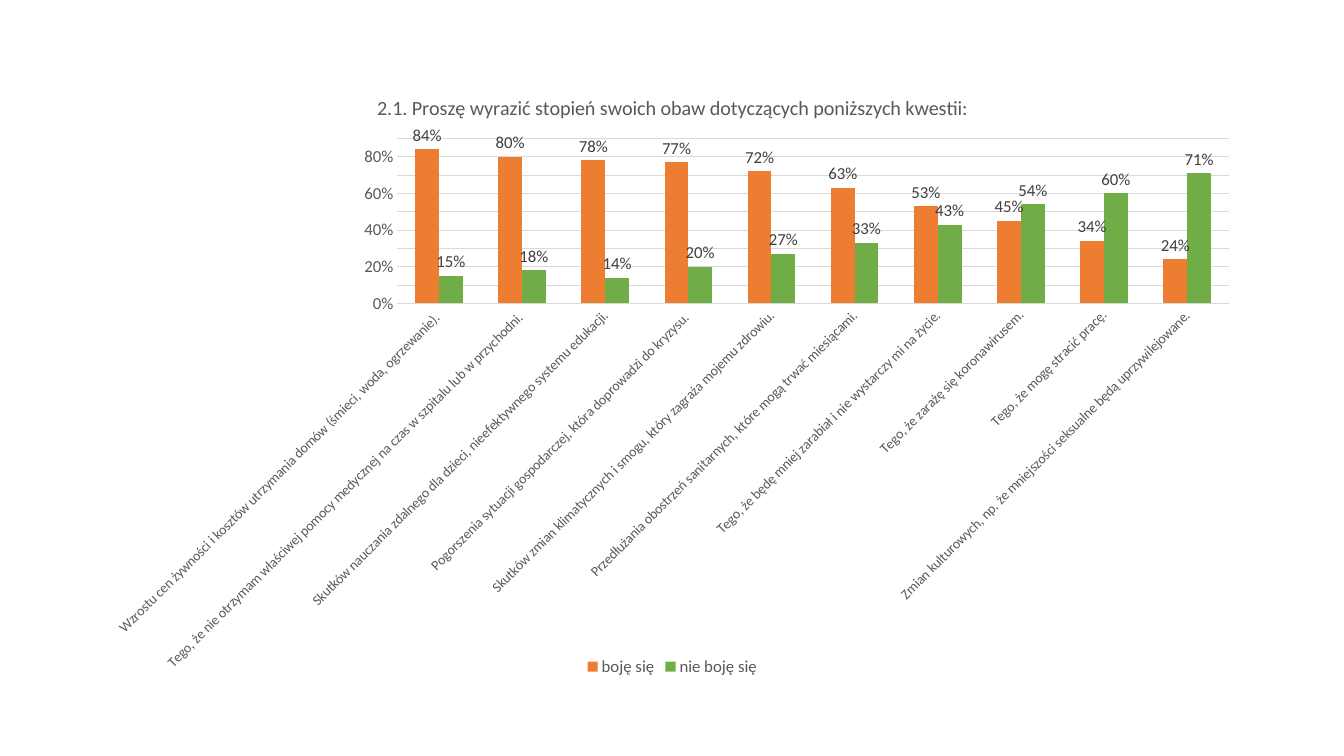
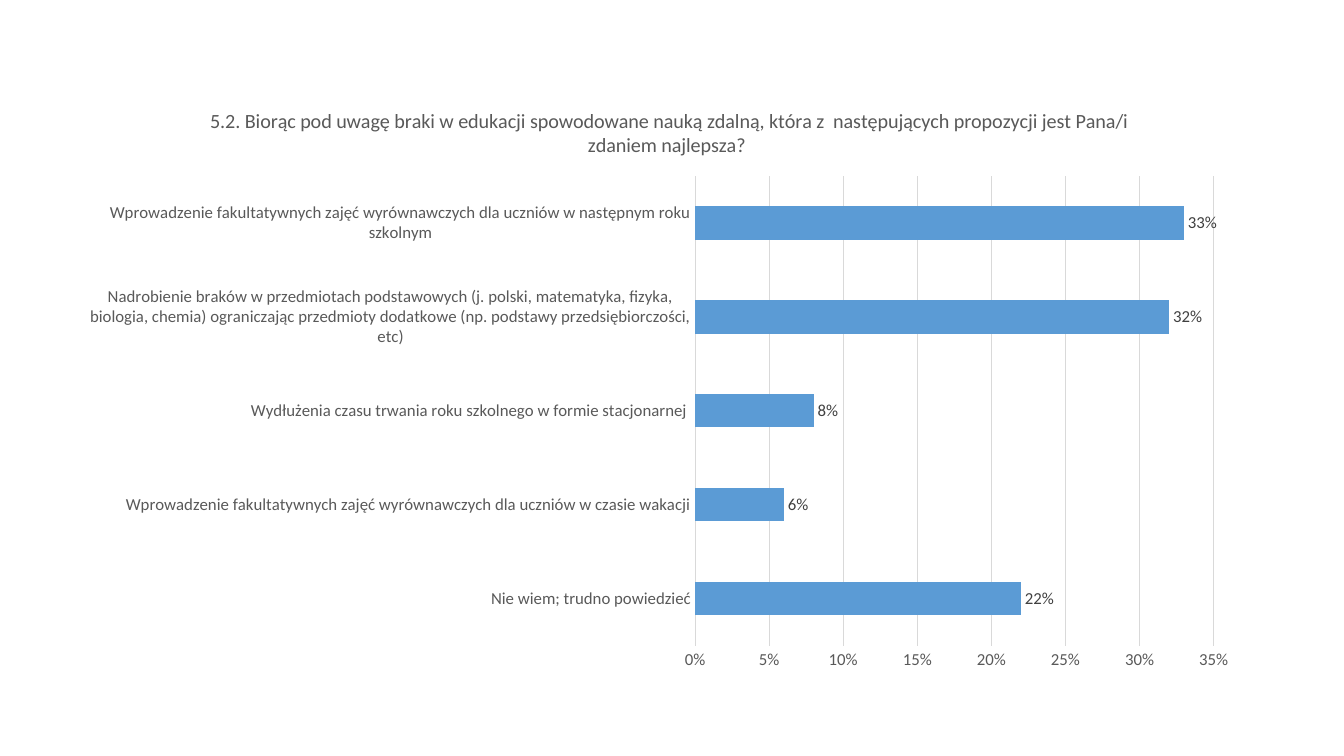
from dataclasses import dataclass

from pptx import Presentation
from pptx.chart.chart import Chart
from pptx.chart.data import CategoryChartData
from pptx.dml.color import RGBColor
from pptx.enum.chart import XL_CHART_TYPE as ChartType
from pptx.enum.chart import XL_LABEL_POSITION as LabelPosition
from pptx.enum.chart import XL_LEGEND_POSITION as LegendPosition
from pptx.enum.chart import XL_TICK_MARK as TickMark
from pptx.slide import Slide
from pptx.text.text import Font
from pptx.util import Cm, Pt

FONT = "Calibri"
TEXT = "595959"
LABEL_TEXT = "404040"
RULE = "D9D9D9"
ORANGE = "ED7D31"
GREEN = "70AD47"
BLUE = "5B9BD5"
BLANK_LAYOUT = 6


@dataclass(frozen=True)
class Answer:
    name: str
    color: str
    shares: tuple[float, ...]


@dataclass(frozen=True)
class Survey:
    question: str
    kind: ChartType
    frame_cm: tuple[float, float, float, float]
    options: tuple[str, ...]
    answers: tuple[Answer, ...]
    gap: int
    number_format: str
    scale_max: float
    scale_step: float
    option_size: float = 12
    option_angle: int = 0
    has_legend: bool = False


FEARS = Survey(
    question="2.1. Proszę wyrazić stopień swoich obaw dotyczących poniższych kwestii:",
    kind=ChartType.COLUMN_CLUSTERED,
    frame_cm=(2.34, 1.83, 29.21, 15.32),
    options=(
        "Wzrostu cen żywności i kosztów utrzymania domów (śmieci, woda, ogrzewanie). ",
        "Tego, że nie otrzymam właściwej pomocy medycznej na czas w szpitalu lub w przychodni. ",
        "Skutków nauczania zdalnego dla dzieci, nieefektywnego systemu edukacji.",
        "Pogorszenia sytuacji gospodarczej, która doprowadzi do kryzysu. ",
        "Skutków zmian klimatycznych i smogu, który zagraża mojemu zdrowiu.",
        "Przedłużania obostrzeń sanitarnych, które mogą trwać miesiącami.",
        "Tego, że będę mniej zarabiał i nie wystarczy mi na życie.",
        "Tego, że zarażę się koronawirusem.",
        "Tego, że mogę stracić pracę.",
        "Zmian kulturowych, np. że mniejszości seksualne będą uprzywilejowane.",
    ),
    answers=(
        Answer("boję się", ORANGE, (0.84, 0.8, 0.78, 0.77, 0.72, 0.63, 0.53, 0.45, 0.34, 0.24)),
        Answer("nie boję się", GREEN, (0.15, 0.18, 0.14, 0.2, 0.27, 0.33, 0.43, 0.54, 0.6, 0.71)),
    ),
    gap=150,
    number_format="###0%",
    scale_max=0.9,
    scale_step=0.1,
    option_size=10,
    option_angle=-45,
    has_legend=True,
)

REMEDIES = Survey(
    question="5.2. Biorąc pod uwagę braki w edukacji spowodowane nauką zdalną, która z  "
    "następujących propozycji jest Pana/i zdaniem najlepsza? ",
    kind=ChartType.BAR_CLUSTERED,
    frame_cm=(2.18, 2.18, 29.36, 14.99),
    options=(
        "Nie wiem; trudno powiedzieć",
        "Wprowadzenie fakultatywnych zajęć wyrównawczych dla uczniów w czasie wakacji",
        "Wydłużenia czasu trwania roku szkolnego w formie stacjonarnej ",
        "Nadrobienie braków w przedmiotach podstawowych (j. polski, matematyka, fizyka, biologia, "
        "chemia) ograniczając przedmioty dodatkowe (np. podstawy przedsiębiorczości, etc)",
        "Wprowadzenie fakultatywnych zajęć wyrównawczych dla uczniów w następnym roku szkolnym",
    ),
    answers=(Answer("Series 1", BLUE, (0.22, 0.06, 0.08, 0.32, 0.33)),),
    gap=182,
    number_format="0%",
    scale_max=0.35,
    scale_step=0.05,
)


def rgb(color: str) -> RGBColor:
    return RGBColor.from_string(color)


def style_font(font: Font, size: float = 12, color: str = TEXT) -> None:
    font.name = FONT
    font.size = Pt(size)
    font.bold = False
    font.color.rgb = rgb(color)


def add_question(chart: Chart, question: str) -> None:
    chart.has_title = True
    chart.chart_title.include_in_layout = False
    run = chart.chart_title.text_frame.paragraphs[0].add_run()
    run.text = question
    style_font(run.font, 14.4)


def style_option_axis(chart: Chart, survey: Survey) -> None:
    axis = chart.category_axis
    axis.major_tick_mark = axis.minor_tick_mark = TickMark.NONE
    axis.has_major_gridlines = False
    axis.format.line.color.rgb = rgb(RULE)
    axis.format.line.width = Pt(0.75)
    style_font(axis.tick_labels.font, survey.option_size)
    if survey.option_angle:
        # Text rotation is stored in 60000ths of a degree.
        body = axis._element.txPr.bodyPr
        body.set("rot", str(survey.option_angle * 60000))
        body.set("vert", "horz")


def style_share_axis(chart: Chart, survey: Survey) -> None:
    axis = chart.value_axis
    axis.minimum_scale = 0
    axis.maximum_scale = survey.scale_max
    axis.major_unit = survey.scale_step
    axis.major_tick_mark = axis.minor_tick_mark = TickMark.NONE
    axis.format.line.fill.background()
    axis.has_major_gridlines = True
    grid = axis.major_gridlines.format.line
    grid.color.rgb = rgb(RULE)
    grid.width = Pt(0.75)
    axis.tick_labels.number_format = survey.number_format
    axis.tick_labels.number_format_is_linked = False
    style_font(axis.tick_labels.font)


def style_answers(chart: Chart, survey: Survey) -> None:
    plot = chart.plots[0]
    plot.gap_width = survey.gap
    plot.overlap = 0
    plot.vary_by_categories = False
    for series, answer in zip(plot.series, survey.answers):
        series.format.fill.solid()
        series.format.fill.fore_color.rgb = rgb(answer.color)
        series.invert_if_negative = False
        labels = series.data_labels
        labels.show_value = True
        labels.position = LabelPosition.OUTSIDE_END
        labels.number_format = survey.number_format
        labels.number_format_is_linked = False
        style_font(labels.font, color=LABEL_TEXT)


def add_legend(chart: Chart) -> None:
    chart.has_legend = True
    chart.legend.position = LegendPosition.BOTTOM
    chart.legend.include_in_layout = False
    style_font(chart.legend.font)


def add_survey_chart(slide: Slide, survey: Survey) -> None:
    results = CategoryChartData(number_format=survey.number_format)
    results.categories = survey.options
    for answer in survey.answers:
        results.add_series(answer.name, answer.shares)
    frame = (Cm(length) for length in survey.frame_cm)
    chart = slide.shapes.add_chart(survey.kind, *frame, results).chart
    style_font(chart.font, color="000000")
    add_question(chart, survey.question)
    style_option_axis(chart, survey)
    style_share_axis(chart, survey)
    style_answers(chart, survey)
    chart.has_legend = False
    if survey.has_legend:
        add_legend(chart)


def main() -> None:
    deck = Presentation()
    deck.slide_width, deck.slide_height = Cm(33.87), Cm(19.05)
    for survey in (FEARS, REMEDIES):
        slide = deck.slides.add_slide(deck.slide_layouts[BLANK_LAYOUT])
        add_survey_chart(slide, survey)
    deck.save("out.pptx")


if __name__ == "__main__":
    main()
